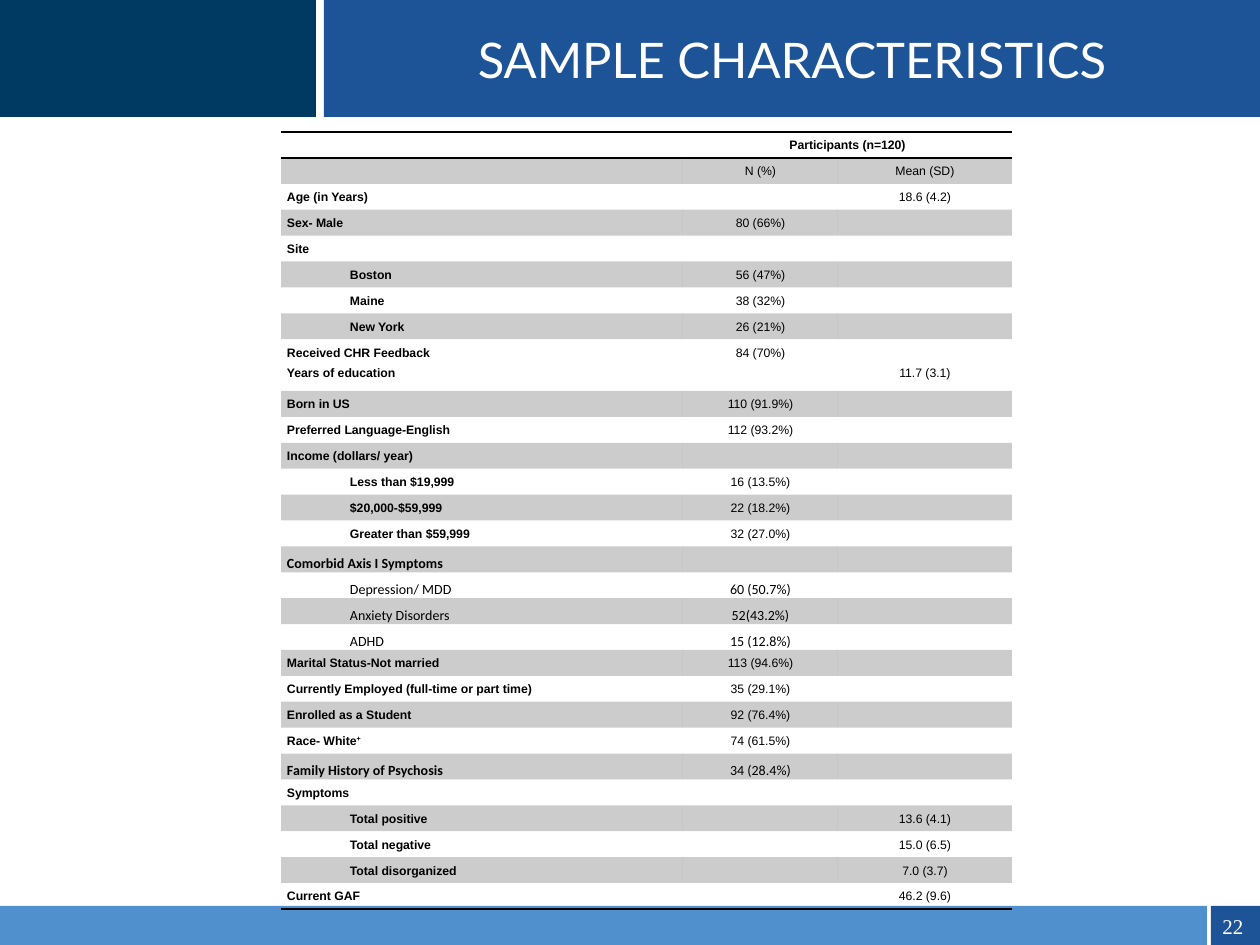
from lxml import etree
from pptx import Presentation
from pptx.dml.color import RGBColor
from pptx.enum.shapes import MSO_SHAPE
from pptx.enum.text import MSO_ANCHOR, MSO_AUTO_SIZE, PP_ALIGN
from pptx.oxml.ns import qn
from pptx.util import Emu, Pt

RECTANGLE = MSO_SHAPE.RECTANGLE
MIDDLE, TOP = MSO_ANCHOR.MIDDLE, MSO_ANCHOR.TOP
LEFT, CENTER = PP_ALIGN.LEFT, PP_ALIGN.CENTER
NO_AUTOFIT = MSO_AUTO_SIZE.NONE

NAVY = RGBColor(0x00, 0x3A, 0x63)
BLUE = RGBColor(0x1D, 0x54, 0x98)
SKY = RGBColor(0x50, 0x91, 0xCD)
WHITE = RGBColor(0xFF, 0xFF, 0xFF)
BLACK = RGBColor(0x00, 0x00, 0x00)

PX_PER_INCH = 126
TITLE_ONLY = 5
PLAIN_TABLE = "{2D5ABB26-0587-4C30-8999-92F81FD0307C}"

TITLE_FONT = {"name": "Lato", "size": Pt(28), "bold": False}
NUMBER_FONT = {"name": "Times New Roman", "size": Pt(12)}
ARIAL = {"name": "Arial", "size": Pt(7)}
CALIBRI = {"name": "Calibri", "size": Pt(8)}

# Label, N (%), Mean (SD); a leading ">" marks an indented label
ROWS = [
    ("", "Participants (n=120)", ""),
    ("", "N (%)", "Mean (SD)"),
    ("Age (in Years)", "", "18.6 (4.2)"),
    ("Sex- Male", "80 (66%)", ""),
    ("Site", "", ""),
    (">Boston", "56 (47%)", ""),
    (">Maine", "38 (32%)", ""),
    (">New York", "26 (21%)", ""),
    ("Received CHR Feedback\nYears of education", "84 (70%)", "11.7 (3.1)"),
    ("Born in US", "110 (91.9%)", ""),
    ("Preferred Language-English", "112 (93.2%)", ""),
    ("Income (dollars/ year)", "", ""),
    (">Less than $19,999", "16 (13.5%)", ""),
    (">$20,000-$59,999", "22 (18.2%)", ""),
    (">Greater than $59,999", "32 (27.0%)", ""),
    ("Comorbid Axis I Symptoms", "", ""),
    (">Depression/ MDD", "60 (50.7%)", ""),
    (">Anxiety Disorders", "52(43.2%)", ""),
    (">ADHD", "15 (12.8%)", ""),
    ("Marital Status-Not married", "113 (94.6%)", ""),
    ("Currently Employed (full-time or part time)", "35 (29.1%)", ""),
    ("Enrolled as a Student", "92 (76.4%)", ""),
    ("Race- White+", "74 (61.5%)", ""),
    ("Family History of Psychosis", "34 (28.4%)", ""),
    ("Symptoms", "", ""),
    (">Total positive", "", "13.6 (4.1)"),
    (">Total negative", "", "15.0 (6.5)"),
    (">Total disorganized", "", "7.0 (3.7)"),
    ("Current GAF", "", "46.2 (9.6)"),
]
DOUBLE_ROW = 8
COMORBID_ITEMS = range(16, 19)
CALIBRI_ROWS = (15, *COMORBID_ITEMS, 23)
COLUMN_WIDTHS = (402, 155, 174)
TABLE_LEFT, TABLE_TOP, TABLE_HEIGHT = 281, 132, 778


def px(length):
    return Emu(round(length * 914400 / PX_PER_INCH))


def assign(target, values):
    for name, value in values.items():
        setattr(target, name, value)


class SlideBuilder:
    def __init__(self, deck):
        self.page = deck.slides.add_slide(deck.slide_layouts[TITLE_ONLY])

    def place(self, shape, left, top, width, height):
        assign(shape, {"left": px(left), "top": px(top),
                       "width": px(width), "height": px(height)})

    def add_span(self, para, text, font, color=BLACK):
        span = para.add_run()
        span.text = text
        assign(span.font, font)
        span.font.color.rgb = color
        return span

    def bar(self, left, top, width, height, color):
        shape = self.page.shapes.add_shape(
            RECTANGLE, px(left), px(top), px(width), px(height))
        shape.shadow.inherit = False
        shape.fill.solid()
        shape.fill.fore_color.rgb = color
        shape.line.fill.background()

    def title(self, text, left, top, width, height):
        box = self.page.shapes.title
        self.place(box, left, top, width, height)
        box.fill.solid()
        box.fill.fore_color.rgb = BLUE
        assign(box.text_frame, {"vertical_anchor": MIDDLE,
                                "auto_size": NO_AUTOFIT, "word_wrap": True})
        para = box.text_frame.paragraphs[0]
        para.alignment = CENTER
        self.add_span(para, text, TITLE_FONT, WHITE)

    def page_number(self, text, left, top, width, height):
        box = self.page.shapes.add_textbox(
            px(left), px(top), px(width), px(height))
        box.text_frame.word_wrap = True
        self.add_span(box.text_frame.paragraphs[0], text, NUMBER_FONT, WHITE)

    def border(self, cell, sides):
        for side in sides:
            line = etree.SubElement(cell._tc.get_or_add_tcPr(),
                                    qn(f"a:ln{side}"), w=str(int(Pt(1))))
            fill = etree.SubElement(line, qn("a:solidFill"))
            etree.SubElement(fill, qn("a:srgbClr"), val=str(BLACK))

    def shade(self, cell, banded):
        if not banded:
            cell.fill.background()
            return
        cell.fill.solid()
        cell.fill.fore_color.rgb = BLACK
        color = cell._tc.tcPr.find(f".//{qn('a:srgbClr')}")
        etree.SubElement(color, qn("a:alpha"), val="20000")

    def cell_text(self, cell, text, font, alignment):
        frame = cell.text_frame
        for index, line in enumerate(text.split("\n")):
            para = frame.add_paragraph() if index else frame.paragraphs[0]
            assign(para, {"alignment": alignment, "line_spacing": 1.5})
            if not line:
                # Keep an empty cell from stretching its row
                etree.SubElement(para._p, qn("a:endParaRPr"),
                                 sz=str(int(font["size"].pt * 100)))
                continue
            if line.startswith(">"):
                para._p.get_or_add_pPr().set("marL", str(int(px(63))))
            label = line.lstrip(">")
            self.add_span(para, label.rstrip("+"), font)
            if label.endswith("+"):
                mark = self.add_span(para, "+", font)
                mark._r.get_or_add_rPr().set("baseline", "30000")

    def table(self, rows, left, top, widths, height):
        frame = self.page.shapes.add_table(
            len(rows), len(widths), px(left), px(top), px(sum(widths)), px(height))
        table = frame.table
        assign(table, {"first_row": False, "horz_banding": False})
        table._tbl.tblPr.find(qn("a:tableStyleId")).text = PLAIN_TABLE
        for column, width in zip(table.columns, widths):
            column.width = px(width)

        unit = height / (len(rows) + 1)
        last = len(rows) - 1
        for r, row in enumerate(rows):
            table.rows[r].height = px(unit * (2 if r == DOUBLE_ROW else 1))
            base = CALIBRI if r in CALIBRI_ROWS else ARIAL
            for c, text in enumerate(row):
                cell = table.cell(r, c)
                assign(cell, {"margin_left": px(6), "margin_right": px(6),
                              "margin_top": 0, "margin_bottom": 0,
                              "vertical_anchor": TOP})
                if r == DOUBLE_ROW and c == 2:
                    cell.margin_top = px(20)  # level with the second label
                bold = r == 0 or (c == 0 and r not in COMORBID_ITEMS)
                self.cell_text(cell, text, {**base, "bold": bold},
                               CENTER if c else LEFT)
                self.border(cell, "TB" if r == 0 else "B" if r == last else "")
                self.shade(cell, r % 2 == 1)
        table.cell(0, 1).merge(table.cell(0, 2))


def main():
    deck = Presentation()
    assign(deck, {"slide_width": px(1260), "slide_height": px(945)})
    slide = SlideBuilder(deck)

    # Header band
    slide.bar(0, 0, 316, 117, NAVY)
    slide.title("SAMPLE CHARACTERISTICS", 324, 0, 936, 117)

    # Footer band and page number
    slide.bar(0, 906, 1207, 39, SKY)
    slide.bar(1211, 906, 49, 39, BLUE)
    slide.page_number("22", 1210, 907, 50, 38)

    # Sample table
    slide.table(ROWS, TABLE_LEFT, TABLE_TOP, COLUMN_WIDTHS, TABLE_HEIGHT)

    deck.save("out.pptx")


if __name__ == "__main__":
    main()
